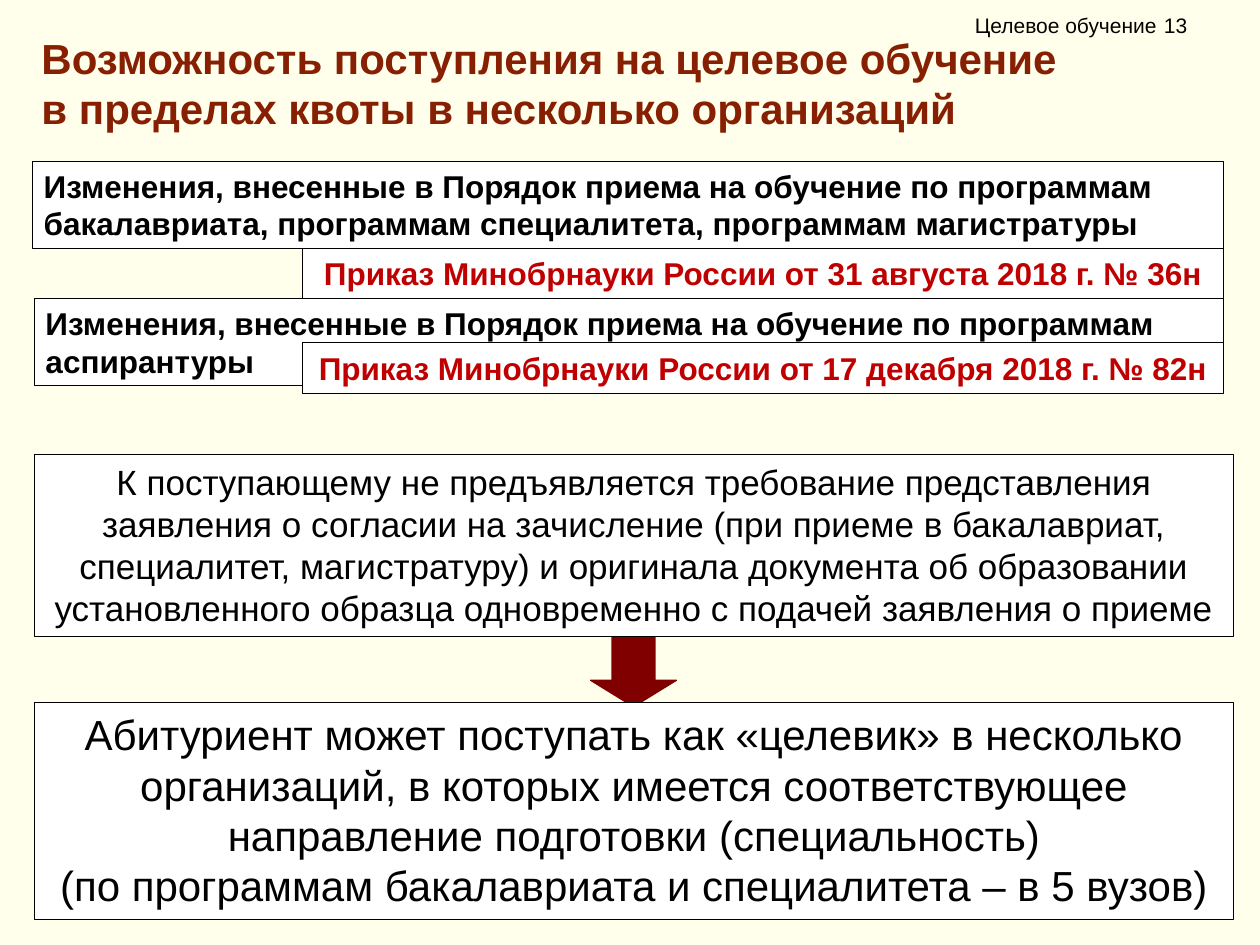
from dataclasses import dataclass

from lxml import etree
from pptx import Presentation
from pptx.dml.color import RGBColor
from pptx.enum.shapes import MSO_SHAPE as Shape
from pptx.enum.text import MSO_ANCHOR as Anchor, MSO_AUTO_SIZE as AutoSize, PP_ALIGN as Align
from pptx.oxml.ns import qn
from pptx.util import Pt


@dataclass(frozen=True)
class Theme:
    font: str = "Arial"
    background: str = "FFFFEB"
    panel: str = "FFFFFF"
    text: str = "000000"
    title: str = "871F03"
    decree: str = "C00000"
    arrow: str = "800000"
    header_size: float = 12
    label_size: float = 18
    body_size: float = 20
    large_size: float = 24
    hairline: float = 0.25


THEME = Theme()


def rgb(value):
    return RGBColor.from_string(value)


def place(shape, left, top, width, height):
    shape.left, shape.top = Pt(left), Pt(top)
    shape.width, shape.height = Pt(width), Pt(height)


def write(shape, lines, size, color, bold=False, align=Align.LEFT,
          anchor=Anchor.TOP, insets=(7.2, 3.6)):
    frame = shape.text_frame
    frame.word_wrap = True
    frame.auto_size = AutoSize.NONE
    frame.vertical_anchor = anchor
    frame.margin_left = frame.margin_right = Pt(insets[0])
    frame.margin_top = frame.margin_bottom = Pt(insets[1])
    frame.text = "\n".join(lines)
    for paragraph in frame.paragraphs:
        paragraph.alignment = align
        paragraph.space_before = Pt(0)
        font = paragraph.font
        font.name, font.size, font.bold = THEME.font, Pt(size), bold
        font.color.rgb = rgb(color)


def add_filled(page, kind, bounds, fill, line, weight):
    shape = page.shapes.add_shape(kind, *map(Pt, bounds))
    shape.shadow.inherit = False
    shape.fill.solid()
    shape.fill.fore_color.rgb = rgb(fill)
    shape.line.color.rgb = rgb(line)
    shape.line.width = Pt(weight)
    return shape


def add_panel(page, bounds, lines, size, color=THEME.text, **style):
    panel = add_filled(page, Shape.RECTANGLE, bounds, THEME.panel, THEME.text, THEME.hairline)
    write(panel, lines, size, color, **style)


def add_title(page, lines):
    title = page.shapes.title
    place(title, 16.5, 15, 677.5, 64)
    write(title, lines, THEME.large_size, THEME.title, bold=True)


def add_header(page, section, number):
    box = page.shapes.add_textbox(Pt(535.5), Pt(0), Pt(184.5), Pt(28.8))
    box.text_frame.text = ""
    properties = box.text_frame.paragraphs[0]._p.get_or_add_pPr()
    tabs = etree.SubElement(properties, qn("a:tabLst"))
    etree.SubElement(tabs, qn("a:tab"), pos=str(Pt(127.5)), algn="l")
    write(box, [f"{section}\t{number}"], THEME.header_size, THEME.text,
          anchor=Anchor.MIDDLE, insets=(21.6, 3.6))


def add_change(page, bounds, text):
    add_panel(page, bounds, [text], THEME.label_size, bold=True, insets=(6.5, 3.2))


def add_decree(page, top, text):
    add_panel(page, (172.8, top, 526.3, 28.8), [text], THEME.label_size,
              THEME.decree, bold=True, align=Align.CENTER)


def add_statement(page, top, height, lines, size):
    add_panel(page, (19.5, top, 685.5, height), lines, size, align=Align.CENTER)


def add_down_arrow(page, bounds):
    arrow = add_filled(page, Shape.DOWN_ARROW, bounds, THEME.arrow, THEME.arrow, 0.75)
    arrow.adjustments[0], arrow.adjustments[1] = 0.5, 0.375


def main():
    deck = Presentation()
    deck.slide_width, deck.slide_height = Pt(720), Pt(540)
    page = deck.slides.add_slide(deck.slide_layouts[5])
    page.background.fill.solid()
    page.background.fill.fore_color.rgb = rgb(THEME.background)

    add_title(page, ["Возможность поступления на целевое обучение",
                     "в пределах квоты в несколько организаций"])
    add_header(page, "Целевое обучение", 13)
    add_down_arrow(page, (337.5, 363.6, 49, 40.3))

    add_decree(page, 141.5, "Приказ Минобрнауки России от 31 августа 2018 г. № 36н")
    add_change(page, (18.5, 92, 680.6, 49.8),
               "Изменения, внесенные в Порядок приема на обучение по программам "
               "бакалавриата, программам специалитета, программам магистратуры")
    add_change(page, (19.5, 170.5, 679.6, 49.8),
               "Изменения, внесенные в Порядок приема на обучение по программам аспирантуры")
    add_decree(page, 195.8, "Приказ Минобрнауки России от 17 декабря 2018 г. № 82н")

    add_statement(page, 259.5, 104,
                  ["К поступающему не предъявляется требование представления заявления "
                   "о согласии на зачисление (при приеме в бакалавриат, специалитет, "
                   "магистратуру) и оригинала документа об образовании установленного "
                   "образца одновременно с подачей заявления о приеме"], THEME.body_size)
    add_statement(page, 401.5, 124,
                  ["Абитуриент может поступать как «целевик» в несколько организаций, "
                   "в которых имеется соответствующее направление подготовки (специальность)",
                   "(по программам бакалавриата и специалитета – в 5 вузов)"], THEME.large_size)
    deck.save("out.pptx")


if __name__ == "__main__":
    main()
